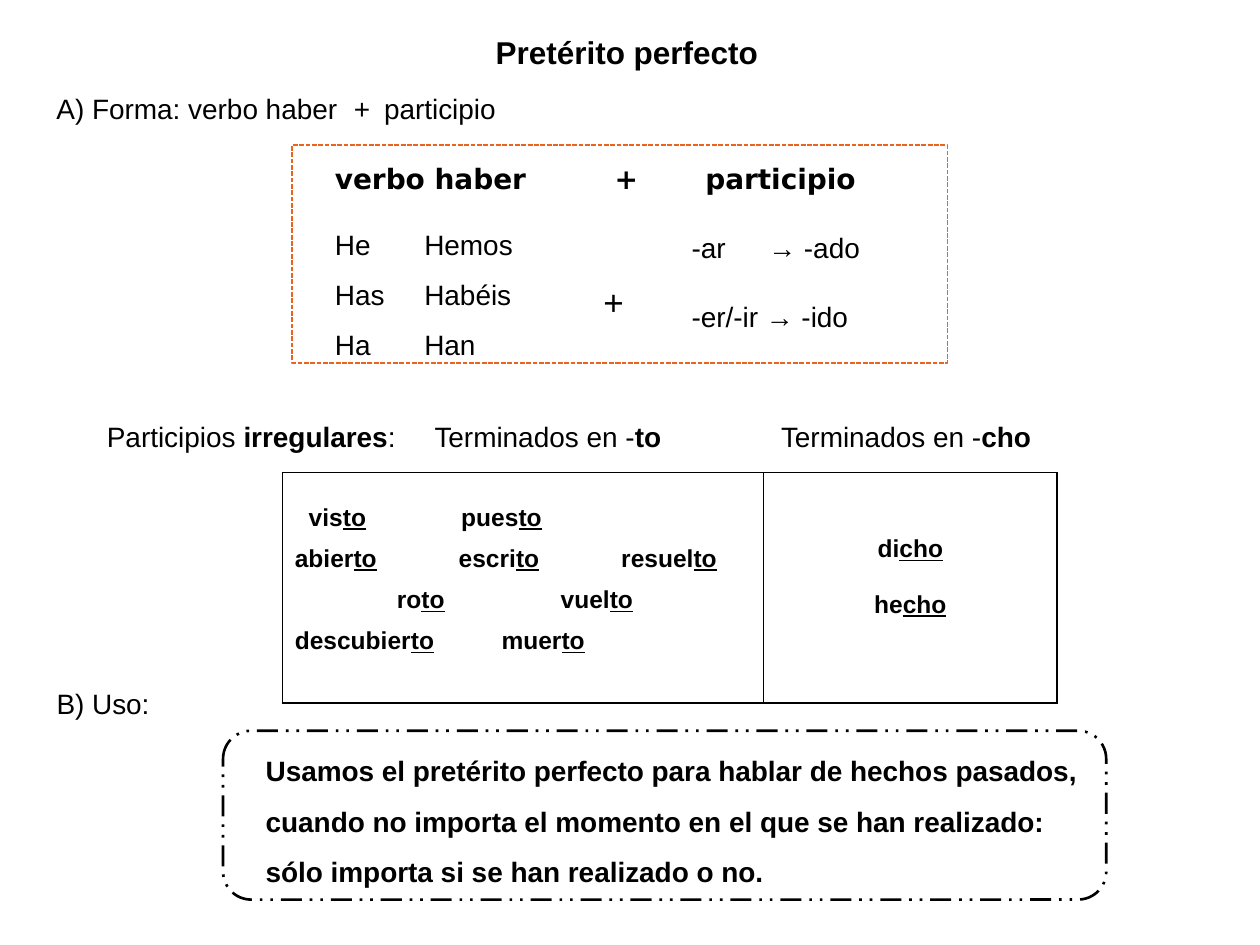
import pptx
import pptx.util
import pptx.oxml
import pptx.oxml.ns
import pptx.dml.color
import pptx.enum.dml
import pptx.enum.shapes
import pptx.enum.text
import lxml.etree

Inches, Pt = pptx.util.Inches, pptx.util.Pt
DASH = pptx.enum.dml.MSO_LINE
SHAPE = pptx.enum.shapes.MSO_SHAPE
ALIGN = pptx.enum.text.PP_ALIGN
ANCHOR = pptx.enum.text.MSO_ANCHOR
FONT, BLACK, WHITE, ORANGE = "Arial", "000000", "FFFFFF", "EB641B"

# Content: pieces between bars are emphasised, tabs lead to the listed stops
TITLE = "Pretérito perfecto"
BOXES = [  # place, lines, options
    ((5.39, 1.78, 4.1, 0.91), ["-ar\t→ -ado", "-er/-ir → -ido"],
     dict(tabs=[0.61], gap=20)),
    ((0.35, 0.68, 3.74, 0.37), ["A) Forma: verbo haber\t+\tparticipio"],
     dict(tabs=[2.36, 2.6])),
    ((0.75, 3.28, 2.52, 0.37), ["Participios |irregulares|:"], {}),
    ((2.56, 1.62, 1.64, 1.26), ["He\tHemos", "Has\tHabéis", "Ha\tHan"],
     dict(tabs=[0.71], space=1.5)),
    ((4.69, 2.18, 0.36, 0.44), ["+"], dict(size=20)),
    ((3.35, 3.28, 2.02, 0.37), ["Terminados en -|to"], {}),
    ((6.1, 3.28, 2.21, 0.37), ["Terminados en -|cho"], {}),
    ((2.56, 1.23, 4.96, 0.37), ["verbo haber\t+\tparticipio"],
     dict(tabs=[2.22, 2.94], bold=True, font="DejaVu Sans")),
    ((0.35, 5.4, 0.95, 0.37), ["B) Uso:"], {}),
    ((2.01, 5.8, 6.69, 1.31),
     ["Usamos el pretérito perfecto para hablar de hechos pasados,",
      "cuando no importa el momento en el que se han realizado:",
      "sólo importa si se han realizado o no."],
     dict(bold=True, space=1.5, wrap=True)),
]
ENDS_TO = [  # line, tab stops
    ("\tvis|to|\tpues|to", [0.11, 1.32]),
    ("abier|to|\tescri|to|\tresuel|to", [1.3, 2.59]),
    ("\tro|to|\tvuel|to", [0.81, 2.11]),
    ("descubier|to|\tmuer|to", [1.64]),
]
ENDS_CHO = ["di|cho", "he|cho"]


def color(code):
    return pptx.dml.color.RGBColor.from_string(code)


def place(box):
    return [Inches(n) for n in box]


def write(para, text, size=16, bold=False, font=FONT, tabs=(), space=None,
          gap=0, mark="bold"):
    if tabs:
        stops = pptx.oxml.parse_xml(
            '<a:tabLst xmlns:a="http://schemas.openxmlformats.org/drawingml/2006/main"/>')
        for pos in tabs:
            lxml.etree.SubElement(stops, pptx.oxml.ns.qn("a:tab"),
                                  pos=str(Inches(pos)), algn="l")
        para._p.get_or_add_pPr().append(stops)
    for i, piece in enumerate(text.split("|")):
        if piece:
            run = para.add_run()
            run.text = piece
            if i % 2:
                setattr(run.font, mark, True)
    para.font.size, para.font.bold, para.font.name = Pt(size), bold, font
    para.font.color.rgb = color(BLACK)
    if space:
        para.line_spacing = space
    if gap:
        para.space_before = Pt(gap)


def paras(frame, count):
    return [frame.paragraphs[0]] + [frame.add_paragraph() for _ in range(count - 1)]


def add_box(box, lines, wrap=False, gap=0, **style):
    frame = slide.shapes.add_textbox(*place(box)).text_frame
    frame.word_wrap = wrap or "tabs" in style
    for i, (para, line) in enumerate(zip(paras(frame, len(lines)), lines)):
        write(para, line, gap=gap if i else 0, **style)


def add_frame(kind, box, fill, line, width, dash):
    shape = slide.shapes.add_shape(kind, *place(box))
    shape.shadow.inherit = False
    if fill:
        shape.fill.solid()
        shape.fill.fore_color.rgb = color(fill)
    else:
        shape.fill.background()
    shape.line.color.rgb = color(line)
    shape.line.width, shape.line.dash_style = Pt(width), dash


def set_edges(cell):
    props = cell._tc.get_or_add_tcPr()
    for i, side in enumerate(("lnL", "lnR", "lnT", "lnB")):
        props.insert(i, pptx.oxml.parse_xml(
            f'<a:{side} xmlns:a="http://schemas.openxmlformats.org/drawingml/2006/main" '
            f'w="{Pt(1)}"><a:solidFill><a:srgbClr val="{BLACK}"/></a:solidFill></a:{side}>'))


deck = pptx.Presentation()
deck.slide_width, deck.slide_height = Inches(10), Inches(7.5)
slide = deck.slides.add_slide(deck.slide_layouts[5])

# Title
head = slide.shapes.title
head.left, head.top, head.width, head.height = place((3.82, 0.21, 2.31, 0.4))
head.text_frame.word_wrap = False
head.text_frame.vertical_anchor = ANCHOR.MIDDLE
write(head.text_frame.paragraphs[0], TITLE, size=18, bold=True)
head.text_frame.paragraphs[0].alignment = ALIGN.CENTER

# Frame for the use
add_frame(SHAPE.ROUNDED_RECTANGLE, (1.77, 5.8, 7.01, 1.34), WHITE, BLACK, 1.5,
          DASH.DASH_DOT_DOT)

# Table of irregular participles
table = slide.shapes.add_table(1, 2, *place((2.24, 3.75, 6.15, 1.83))).table
table.first_row = table.horz_banding = False
for col, width in zip(table.columns, (3.82, 2.33)):
    col.width = Inches(width)
left, right = table.cell(0, 0), table.cell(0, 1)
for cell, top in ((left, 0.14), (right, 0.5)):
    cell.margin_top = Inches(top)
    cell.fill.solid()
    cell.fill.fore_color.rgb = color(WHITE)
    set_edges(cell)
look = dict(size=14, bold=True, mark="underline")
for para, (line, tabs) in zip(paras(left.text_frame, len(ENDS_TO)), ENDS_TO):
    write(para, line, tabs=tabs, space=1.5, **look)
for i, (para, line) in enumerate(zip(paras(right.text_frame, len(ENDS_CHO)), ENDS_CHO)):
    write(para, line, gap=16 * i, **look)
    para.alignment = ALIGN.CENTER

# Frame for the form, then all texts
add_frame(SHAPE.RECTANGLE, (2.32, 1.15, 5.2, 1.73), None, ORANGE, 0.9,
          DASH.SQUARE_DOT)
for box, lines, style in BOXES:
    add_box(box, lines, **style)

deck.save("out.pptx")
